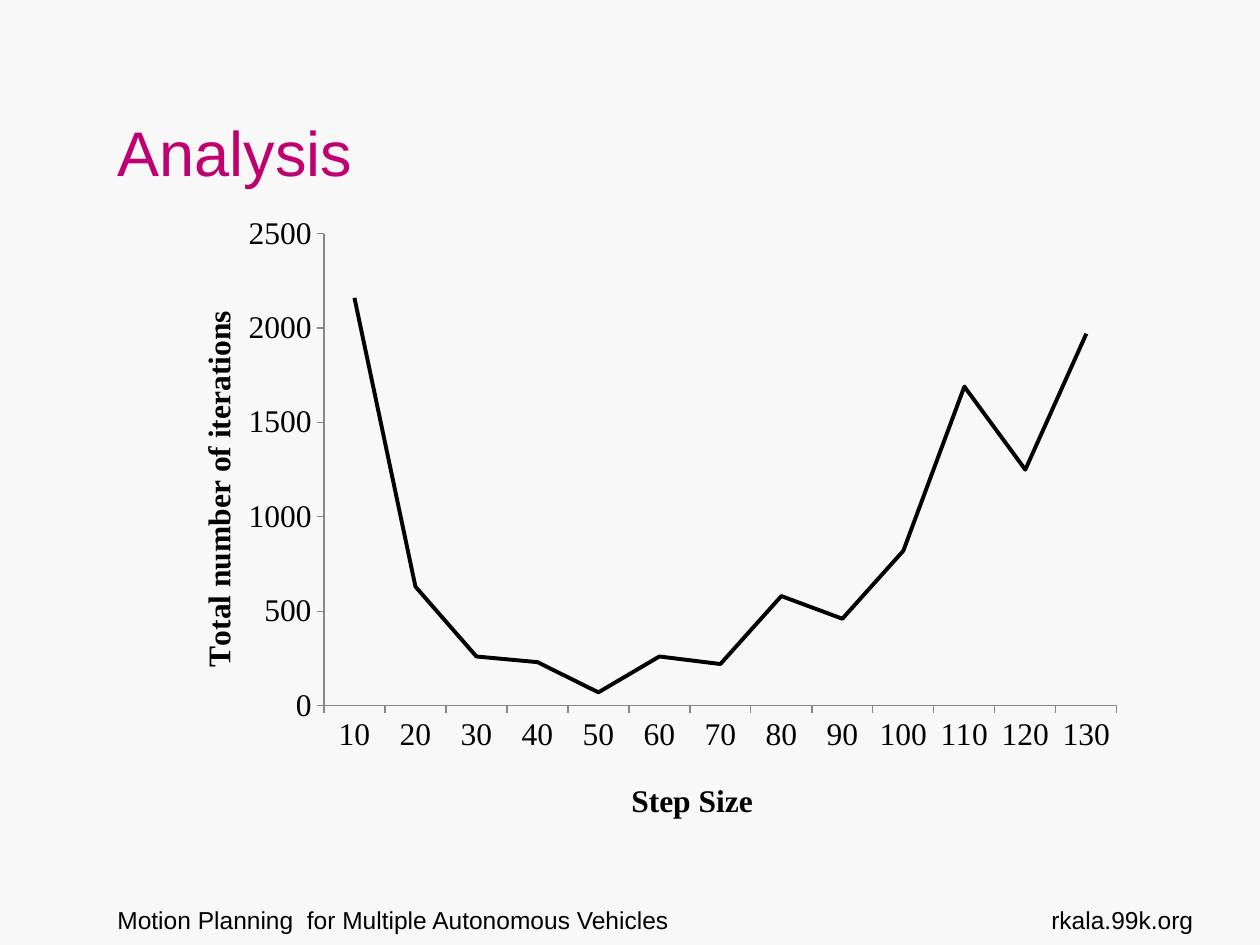
from pptx import Presentation
from pptx.chart.data import CategoryChartData
from pptx.dml.color import RGBColor
from pptx.enum.chart import XL_CHART_TYPE, XL_TICK_MARK
from pptx.enum.text import MSO_ANCHOR, PP_ALIGN
from pptx.oxml import parse_xml
from pptx.oxml.ns import nsdecls, qn
from pptx.util import Pt

TITLE = "Analysis"
FOOTERS = [
    ("Motion Planning  for Multiple Autonomous Vehicles", 60, 499, PP_ALIGN.LEFT),
    ("rkala.99k.org", 581, 108, PP_ALIGN.RIGHT),
]
STEP_SIZES = [str(size) for size in range(10, 140, 10)]
ITERATIONS = [2160, 630, 260, 230, 70, 260, 220, 580, 460, 820, 1690, 1250, 1970]
CHART_FONT = "Times New Roman"


def color(value):
    return RGBColor.from_string(value)


def format_font(font, size, name="Arial", fill="000000", bold=False):
    font.size, font.name, font.bold = Pt(size), name, bold
    font.color.rgb = color(fill)


def write(text_frame, text, align=PP_ALIGN.LEFT, anchor=MSO_ANCHOR.TOP, wrap=True, **style):
    text_frame.word_wrap = wrap
    text_frame.vertical_anchor = anchor
    paragraph = text_frame.paragraphs[0]
    paragraph.alignment = align
    run = paragraph.add_run()
    run.text = text
    format_font(run.font, **style)


def set_layout(parent, index, target="", **fractions):
    for layout in parent.findall(qn("c:layout")):
        parent.remove(layout)
    inner = f'<c:layoutTarget val="{target}"/>' if target else ""
    modes = "".join(f'<c:{key}Mode val="edge"/>' for key in "xy")
    values = "".join(f'<c:{key} val="{value}"/>' for key, value in fractions.items())
    parent.insert(index, parse_xml(
        f'<c:layout {nsdecls("c")}><c:manualLayout>{inner}{modes}{values}'
        "</c:manualLayout></c:layout>"))


def format_axis(axis, title, x, y):
    axis.has_major_gridlines = False
    axis.major_tick_mark = XL_TICK_MARK.OUTSIDE
    axis.minor_tick_mark = XL_TICK_MARK.NONE
    axis.format.line.color.rgb = color("878787")
    axis.format.line.width = Pt(0.75)
    format_font(axis.tick_labels.font, 18, CHART_FONT)
    axis.has_title = True
    run = axis.axis_title.text_frame.paragraphs[0].add_run()
    run.text = title
    format_font(run.font, 18, CHART_FONT, bold=True)
    set_layout(axis.axis_title._element, 1, x=x, y=y)


def add_line_chart(slide):
    data = CategoryChartData()
    data.categories = STEP_SIZES
    data.add_series("Series 1", ITERATIONS)
    chart = slide.shapes.add_chart(
        XL_CHART_TYPE.LINE, Pt(88), Pt(116.5), Pt(561.5), Pt(363), data).chart
    chart.has_legend = False
    chart.has_title = False
    format_font(chart.font, 18, CHART_FONT)
    plot = chart.plots[0]
    plot.vary_by_categories = False
    series = plot.series[0]
    series.smooth = False
    series.format.line.color.rgb = color("000000")
    series.format.line.width = Pt(2.25)
    format_axis(chart.category_axis, "Step Size", 0.48, 0.9)
    format_axis(chart.value_axis, "Total number of iterations", 0.04, 0.16)
    chart.value_axis.minimum_scale = 0
    chart.value_axis.maximum_scale = 2500
    chart.value_axis.major_unit = 500
    plot_area = chart._chartSpace.chart.plotArea
    set_layout(plot_area, 0, "inner", x=0.173, y=0.047, w=0.807, h=0.743)


def main():
    presentation = Presentation()
    presentation.slide_width, presentation.slide_height = Pt(720), Pt(540)
    slide = presentation.slides.add_slide(presentation.slide_layouts[5])
    slide.background.fill.solid()
    slide.background.fill.fore_color.rgb = color("F8F8F8")

    title = slide.shapes.title
    title.left, title.top, title.width, title.height = Pt(60), Pt(21.5), Pt(487.5), Pt(90)
    write(title.text_frame, TITLE, anchor=MSO_ANCHOR.BOTTOM, wrap=False, size=36, fill="BF0071")

    for text, left, width, align in FOOTERS:
        box = slide.shapes.add_textbox(Pt(left), Pt(513.5), Pt(width), Pt(37.5))
        write(box.text_frame, text, align=align, size=14)

    add_line_chart(slide)
    presentation.save("out.pptx")


if __name__ == "__main__":
    main()
